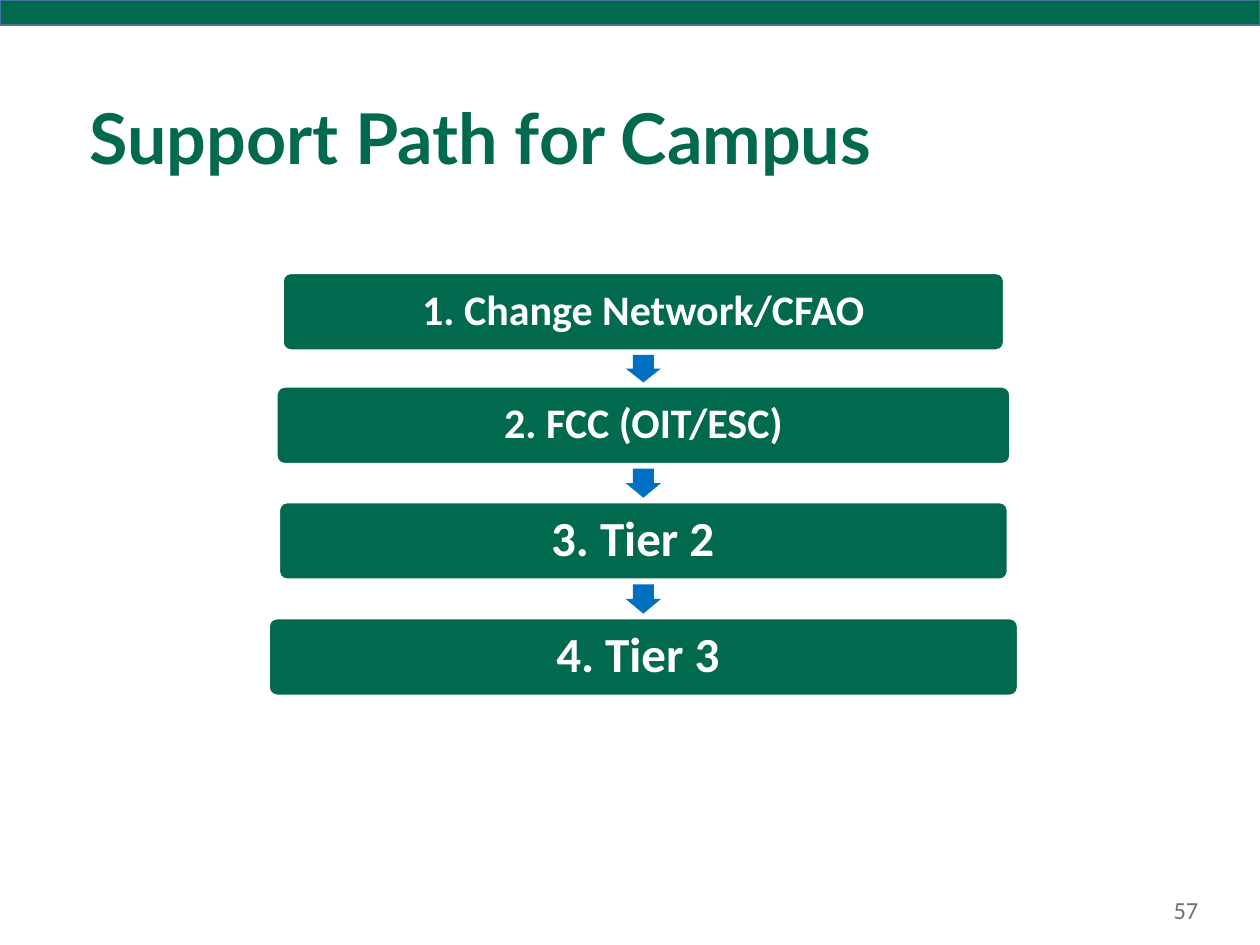
from itertools import pairwise
from typing import NamedTuple

from pptx import Presentation
from pptx import util as u
from pptx.dml.color import RGBColor
from pptx.enum import shapes, text

GREEN, BLUE, WHITE = "00694E", "0070C0", "FFFFFF"
BAR_EDGE, NUMBER_GREY = "43739E", "776F67"
FLOW_CENTER, STEP_HEIGHT = 12.97, 1.55  # cm
ARROW_WIDTH, ARROW_SHARE = 0.71, 0.75  # cm, share of the gap it fills


class Step(NamedTuple):
    label: str
    top: float
    width: float
    size: int
    inset: float
    extra_right: float = 0  # nudges the centred label to the left


STEPS = [
    Step("1. Change Network/CFAO", 5.51, 14.53, 24, 0.25),
    Step("2. FCC (OIT/ESC)", 7.8, 14.78, 24, 0.25),
    Step("3. Tier 2", 10.13, 14.68, 28, 0.3, 0.43),
    Step("4. Tier 3", 12.47, 15.09, 28, 0.3, 0.22),
]


def color(code: str) -> RGBColor:
    return RGBColor.from_string(code)


def add_block(slide, kind, left: float, top: float, width: float, height: float,
              fill: str, edge: str | None = None):
    """Add a flat filled shape, measured in cm, with an optional 1 pt edge."""
    block = slide.shapes.add_shape(kind, u.Cm(left), u.Cm(top), u.Cm(width), u.Cm(height))
    block.shadow.inherit = False
    block.fill.solid()
    block.fill.fore_color.rgb = color(fill)
    if edge:
        block.line.color.rgb = color(edge)
        block.line.width = u.Pt(1)
    else:
        block.line.fill.background()
    return block


def write(frame, words: str, font: str, size: int, ink: str, align, bold: bool = False) -> None:
    frame.text = words
    frame.word_wrap = True
    frame.auto_size = text.MSO_AUTO_SIZE.NONE
    frame.vertical_anchor = text.MSO_ANCHOR.MIDDLE
    paragraph = frame.paragraphs[0]
    paragraph.alignment = align
    paragraph.line_spacing = 0.9
    paragraph.font.name = font
    paragraph.font.size = u.Pt(size)
    paragraph.font.bold = bold
    paragraph.font.color.rgb = color(ink)


def add_step(slide, step: Step) -> None:
    box = add_block(slide, shapes.MSO_SHAPE.ROUNDED_RECTANGLE, FLOW_CENTER - step.width / 2,
                    step.top, step.width, STEP_HEIGHT, GREEN, WHITE)
    box.adjustments[0] = 0.1
    frame = box.text_frame
    frame.margin_left = frame.margin_top = frame.margin_bottom = u.Cm(step.inset)
    frame.margin_right = u.Cm(step.inset + step.extra_right)
    write(frame, step.label, "Calibri", step.size, WHITE, text.PP_ALIGN.CENTER, True)


def add_arrow(slide, upper: Step, lower: Step) -> None:
    """Centre a down arrow in the gap between two steps."""
    gap_top = upper.top + STEP_HEIGHT
    gap = lower.top - gap_top
    length = gap * ARROW_SHARE
    arrow = add_block(slide, shapes.MSO_SHAPE.DOWN_ARROW, FLOW_CENTER - ARROW_WIDTH / 2,
                      gap_top + (gap - length) / 2, ARROW_WIDTH, length, BLUE)
    arrow.adjustments[0] = 0.6
    arrow.adjustments[1] = 0.5


def main() -> None:
    deck = Presentation()
    deck.slide_width, deck.slide_height = u.Cm(25.4), u.Cm(19.05)
    slide = deck.slides.add_slide(deck.slide_layouts[5])

    page_number = slide.shapes.add_textbox(u.Cm(16.79), u.Cm(17.86), u.Cm(7.62), u.Cm(1.02))
    write(page_number.text_frame, "57", "Calibri", 14, NUMBER_GREY, text.PP_ALIGN.RIGHT)
    add_block(slide, shapes.MSO_SHAPE.RECTANGLE, 0, 0, 25.4, 0.51, GREEN, BAR_EDGE)

    title = slide.shapes.title
    title.left, title.top = u.Cm(1.55), u.Cm(1.02)
    title.width, title.height = u.Cm(21.89), u.Cm(3.68)
    write(title.text_frame, "Support Path for Campus", "Lato", 40, GREEN,
          text.PP_ALIGN.LEFT, True)

    for step in STEPS:
        add_step(slide, step)
    for upper, lower in pairwise(STEPS):
        add_arrow(slide, upper, lower)

    deck.save("out.pptx")


if __name__ == "__main__":
    main()
